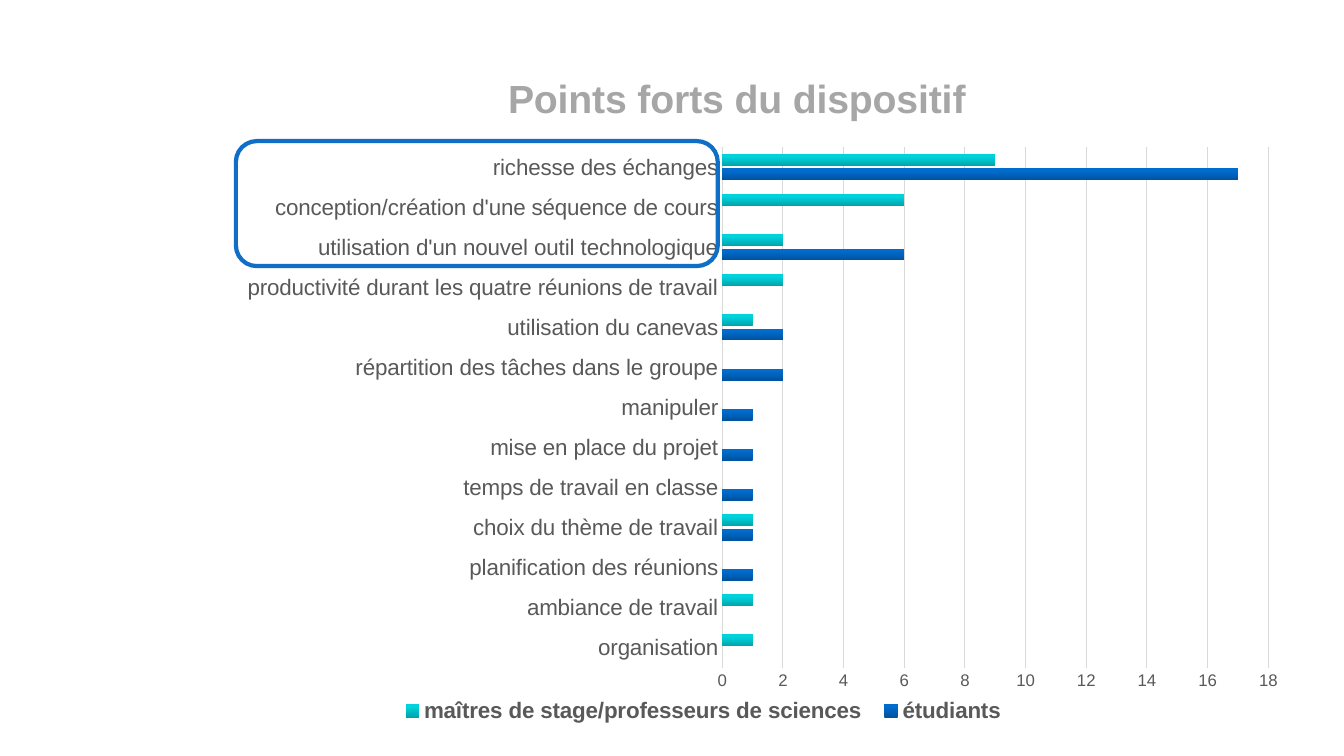
from lxml import etree
from pptx import Presentation
from pptx.chart.data import CategoryChartData
from pptx.dml.color import RGBColor
from pptx.enum.chart import XL_CHART_TYPE as CT, XL_LEGEND_POSITION as LP, XL_TICK_MARK as TM
from pptx.enum.shapes import MSO_SHAPE
from pptx.oxml import parse_xml
from pptx.oxml.ns import nsdecls, qn
from pptx.util import Pt

TITLE = "Points forts du dispositif"
SERIES = ("étudiants", "maîtres de stage/professeurs de sciences")
ROWS = [
    ("organisation", None, 1),
    ("ambiance de travail", None, 1),
    ("planification des réunions", 1, None),
    ("choix du thème de travail", 1, 1),
    ("temps de travail en classe", 1, None),
    ("mise en place du projet", 1, None),
    ("manipuler", 1, None),
    ("répartition des tâches dans le groupe", 2, None),
    ("utilisation du canevas", 2, 1),
    ("productivité durant les quatre réunions de travail", None, 2),
    ("utilisation d'un nouvel outil technologique", 6, 2),
    ("conception/création d'une séquence de cours", None, 6),
    ("richesse des échanges", 17, 9),
]
GRADIENTS = [
    ((0, "00539F"), (80, "006CCE"), (100, "006DCF")),
    ((0, "00A3AA"), (80, "00D3DD"), (100, "00D4DE")),
]
BLACK = RGBColor(0x00, 0x00, 0x00)
TITLE_GREY = RGBColor(0xA6, 0xA6, 0xA6)
TEXT_GREY = RGBColor(0x59, 0x59, 0x59)
GRID_GREY = RGBColor(0xD9, 0xD9, 0xD9)
FRAME_BLUE = RGBColor(0x0F, 0x6F, 0xC6)


def set_font(font, size, color, bold=False):
    font.name, font.size, font.bold = "Arial", Pt(size), bold
    font.color.rgb = color


def set_layout(parent, index, x, y, w, h, inner=False):
    for old in parent.findall(qn("c:layout")):
        parent.remove(old)
    layout = parse_xml(f"<c:layout {nsdecls('c')}><c:manualLayout/></c:layout>")
    items = [("layoutTarget", "inner")] if inner else []
    items += [("xMode", "edge"), ("yMode", "edge"), ("x", x), ("y", y), ("w", w), ("h", h)]
    for tag, val in items:
        etree.SubElement(layout[0], qn(f"c:{tag}")).set("val", str(val))
    parent.insert(index, layout)


def fill_gradient(series, stops):
    sp_pr = series.format.fill and series._element.find(qn("c:spPr"))
    gs = "".join(
        f'<a:gs pos="{pos * 1000}"><a:srgbClr val="{rgb}"/></a:gs>' for pos, rgb in stops
    )
    sp_pr.insert(0, parse_xml(
        f'<a:gradFill {nsdecls("a")} rotWithShape="1"><a:gsLst>{gs}</a:gsLst>'
        '<a:lin ang="16200000" scaled="0"/></a:gradFill>'
    ))


prs = Presentation()
prs.slide_width, prs.slide_height = Pt(960), Pt(540)
s = prs.slides.add_slide(prs.slide_layouts[6])

data = CategoryChartData()
labels, *values = zip(*ROWS)
data.categories = labels
for name, vals in zip(SERIES, values):
    data.add_series(name, vals)
chart = s.shapes.add_chart(
    CT.BAR_CLUSTERED, Pt(127.4), Pt(34.6), Pt(797.8), Pt(490.3), data
).chart
set_font(chart.font, 10, BLACK)

chart.has_title = True
tf = chart.chart_title.text_frame
tf.text = TITLE
set_font(tf.paragraphs[0].runs[0].font, 28, TITLE_GREY, True)
chart.chart_title.include_in_layout = False

plot = chart.plots[0]
plot.gap_width, plot.overlap, plot.vary_by_categories = 115, -20, False
for series, stops in zip(plot.series, GRADIENTS):
    series.invert_if_negative = False
    fill_gradient(series, stops)

cat, val = chart.category_axis, chart.value_axis
for axis, size in ((cat, 16), (val, 12)):
    axis.major_tick_mark = axis.minor_tick_mark = TM.NONE
    set_font(axis.tick_labels.font, size, TEXT_GREY)
cat.format.line.color.rgb = GRID_GREY
cat.format.line.width = Pt(1)
val.format.line.fill.background()
val.minimum_scale, val.maximum_scale, val.major_unit = 0, 18, 2
val.has_major_gridlines = True
grid = val.major_gridlines.format.line
grid.color.rgb, grid.width = GRID_GREY, Pt(0.75)

chart.has_legend = True
legend = chart.legend
legend.position, legend.include_in_layout = LP.BOTTOM, False
set_font(legend.font, 16, TEXT_GREY, True)

set_layout(plot._element.getparent(), 0, 0.487, 0.144, 0.489, 0.758, True)
set_layout(legend._element, 1, 0.19, 0.94, 0.56, 0.05)

frame = s.shapes.add_shape(
    MSO_SHAPE.ROUNDED_RECTANGLE, Pt(168.5), Pt(100.8), Pt(344.2), Pt(89.3)
)
frame.shadow.inherit = False
frame.fill.background()
frame.line.color.rgb, frame.line.width = FRAME_BLUE, Pt(3)

prs.save("out.pptx")
